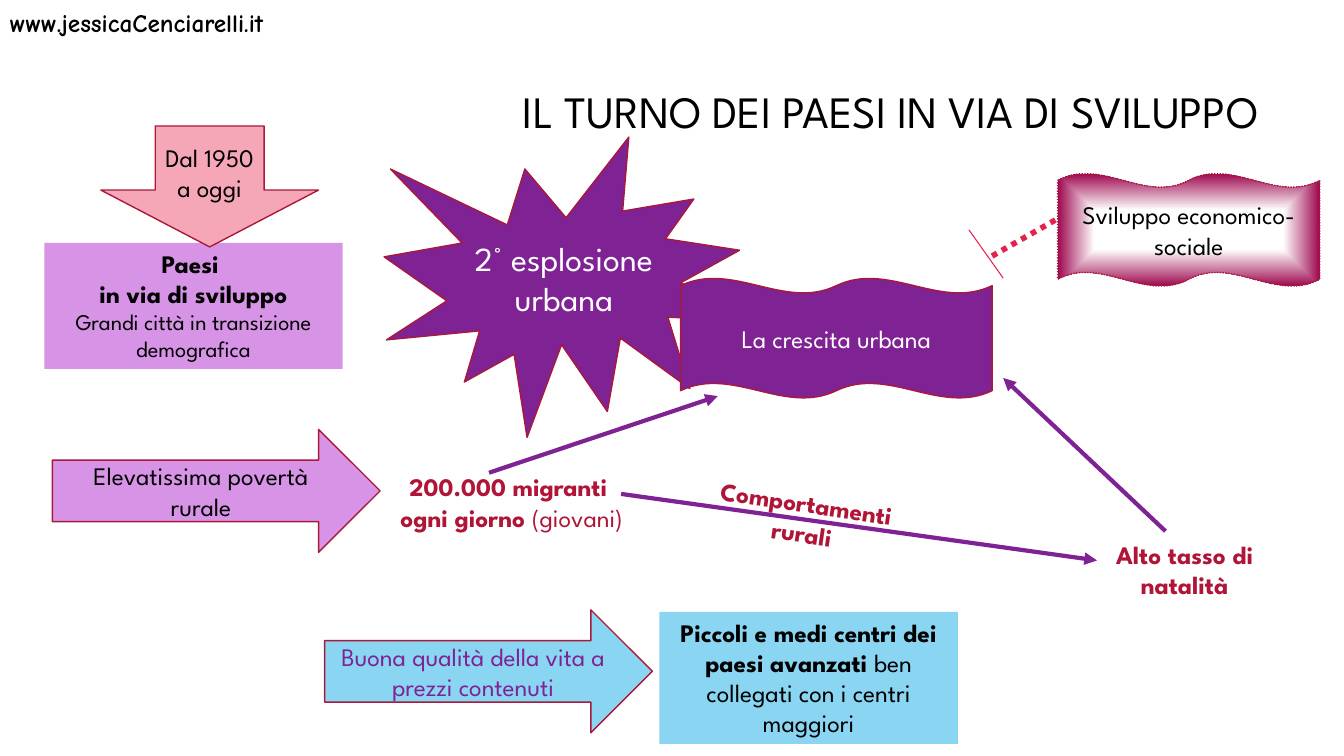
from dataclasses import dataclass

from lxml import etree
from pptx import Presentation
from pptx import util as u
from pptx.dml.color import RGBColor
from pptx.enum import dml, shapes, text
from pptx.oxml import parse_xml
from pptx.oxml.ns import nsdecls, qn

KIND = shapes.MSO_SHAPE
FIT = text.MSO_AUTO_SIZE
PX = 9144


@dataclass(frozen=True)
class Theme:
    """Colours, fonts and type sizes of the slide."""
    purple: str = "7F2294"
    lilac: str = "D794E6"
    sky: str = "89D5F2"
    pink: str = "F5A7B8"
    border: str = "A9193A"
    red: str = "E5224E"
    crimson: str = "B01538"
    plum: str = "9D074E"
    black: str = "000000"
    white: str = "FFFFFF"
    font: str = "League Spartan"
    address_font: str = "Comic Neue"
    title: int = 32
    burst: int = 24
    body: int = 18
    small: int = 16


class Page:
    """Draws styled elements on one slide, with lengths in px."""

    def __init__(self, deck, theme):
        self.theme = theme
        self.slide = deck.slides.add_slide(deck.slide_layouts[5])

    def fill_text(self, box, paras, color, size=None, font=None, align=text.PP_ALIGN.CENTER,
                  anchor=text.MSO_ANCHOR.TOP, fit=FIT.NONE, spacing=None):
        """Fill a box with paragraphs, each a list of (words, bold[, size]) runs."""
        frame = box.text_frame
        frame.word_wrap = True
        frame.auto_size = fit
        frame.vertical_anchor = anchor
        for index, runs in enumerate(paras):
            para = frame.add_paragraph() if index else frame.paragraphs[0]
            para.alignment = align
            if spacing:
                para.line_spacing = spacing
            for words, bold, *own_size in runs:
                span = para.add_run()
                span.text = words
                span.font.name = font or self.theme.font
                span.font.size = u.Pt(own_size[0] if own_size else size or self.theme.body)
                span.font.bold = bold
                span.font.color.rgb = RGBColor.from_string(color)

    def title(self, at, words):
        """Place and format the title placeholder."""
        box = self.slide.shapes.title
        box.left, box.top, box.width, box.height = (n * PX for n in at)
        self.fill_text(box, [[(words, False)]], self.theme.black, self.theme.title,
                       align=text.PP_ALIGN.RIGHT, spacing=0.9)

    def label(self, at, paras, color, rotation=0, **style):
        """Add a text box."""
        box = self.slide.shapes.add_textbox(*(n * PX for n in at))
        box.rotation = rotation
        self.fill_text(box, paras, color, fit=FIT.SHAPE_TO_FIT_TEXT, **style)

    def shape(self, kind, at, fill, paras, color, adjust=(), border=True, **style):
        """Add a filled preset shape with text."""
        box = self.slide.shapes.add_shape(kind, *(n * PX for n in at))
        box.shadow.inherit = False
        for index, value in enumerate(adjust):
            box.adjustments[index] = value
        box.fill.solid()
        box.fill.fore_color.rgb = RGBColor.from_string(fill)
        if border:
            box.line.color.rgb = RGBColor.from_string(self.theme.border)
            box.line.width = u.Pt(1)
        else:
            box.line.fill.background()
        self.fill_text(box, paras, color, **style)
        return box

    def panel(self, at, fill, paras):
        """Add a borderless rectangle with text from the top."""
        self.shape(KIND.RECTANGLE, at, fill, paras, self.theme.black, border=False,
                   fit=FIT.SHAPE_TO_FIT_TEXT)

    def figure(self, kind, at, fill, lines, color, **style):
        """Add a bordered shape with plain centred lines."""
        return self.shape(kind, at, fill, [[(line, False)] for line in lines], color,
                          anchor=text.MSO_ANCHOR.MIDDLE, **style)

    def glow(self, box, inner, outer):
        """Give a shape a gradient that darkens towards its edges."""
        stops = "".join(f'<a:gs pos="{pos}"><a:srgbClr val="{color}"/></a:gs>'
                        for pos, color in ((0, inner), (35000, inner), (100000, outer)))
        gradient = parse_xml(
            f'<a:gradFill {nsdecls("a")} rotWithShape="1"><a:gsLst>{stops}</a:gsLst>'
            '<a:path path="shape"><a:fillToRect l="50000" t="50000" r="50000" b="50000"/>'
            '</a:path></a:gradFill>')
        props = box.element.spPr
        props.replace(props.find(qn("a:solidFill")), gradient)

    def line(self, start, end, color, width, dash=None, arrow=False):
        """Add a straight line, optionally dotted or with an arrowhead."""
        link = self.slide.shapes.add_connector(
            shapes.MSO_CONNECTOR.STRAIGHT, *(n * PX for n in (*start, *end)))
        link.line.color.rgb = RGBColor.from_string(color)
        link.line.width = u.Pt(width)
        if dash:
            link.line.dash_style = dash
        props = link.element.spPr
        if arrow:
            etree.SubElement(props.find(qn("a:ln")), qn("a:tailEnd"), type="triangle")
        etree.SubElement(props, qn("a:effectLst"))


def main():
    """Build the slide and save it."""
    deck = Presentation()
    deck.slide_width, deck.slide_height = 1333 * PX, 750 * PX
    theme = Theme()
    page = Page(deck, theme)
    dotted = dml.MSO_LINE.ROUND_DOT

    page.title((317, 84, 942, 58), "IL TURNO DEI PAESI IN VIA DI SVILUPPO")
    page.figure(KIND.EXPLOSION1, (381, 136, 361, 298), theme.purple,
                ["2° esplosione", "urbana"], theme.white, size=theme.burst)
    page.panel((44, 241, 296, 125), theme.lilac, [
        [("Paesi ", True)],
        [("in via di sviluppo", True)],
        [("Grandi città in transizione demografica", False, theme.small)]])
    page.label((353, 463, 309, 71), [
        [("200.000 migranti ", True)],
        [("ogni giorno ", True), ("(giovani)", False)]], theme.crimson)
    page.figure(KIND.DOWN_ARROW, (100, 125, 216, 120), theme.pink,
                ["Dal 1950", "a oggi"], theme.black, adjust=(0.5, 0.47))
    page.label((0, 2, 341, 40), [[("www.jessicaCenciarelli.it", True)]], theme.black,
               font=theme.address_font, align=text.PP_ALIGN.LEFT)

    page.figure(KIND.DOUBLE_WAVE, (675, 276, 309, 119), theme.purple,
                ["La crescita urbana"], theme.white)
    growth = page.figure(KIND.DOUBLE_WAVE, (1049, 172, 260, 112), theme.white,
                         ["Sviluppo economico-sociale"], theme.black)
    page.glow(growth, theme.white, theme.plum)
    growth.line.dash_style = dotted
    page.line((984, 254), (1049, 217), theme.red, 4, dash=dotted)
    page.line((961, 228), (995, 276), theme.red, 0.75)

    page.label((1062, 530, 226, 71), [[("Alto tasso di natalità", True)]], theme.crimson)
    page.label((690, 479, 215, 71), [[("Comportamenti rurali", True)]], theme.crimson,
               rotation=8.4)
    for start, end in (((485, 469), (712, 393)),
                       ((1156, 527), (995, 375)),
                       ((616, 490), (1088, 556))):
        page.line(start, end, theme.purple, 3, arrow=True)

    page.panel((654, 607, 296, 131), theme.sky, [
        [("Piccoli e medi centri dei paesi avanzati ", True),
         ("ben collegati con i centri maggiori", False)]])
    for left, top, fill, color, words in (
            (322, 605, theme.sky, theme.purple, "Buona qualità della vita a prezzi contenuti"),
            (52, 426, theme.lilac, theme.black, "Elevatissima povertà rurale")):
        page.figure(KIND.RIGHT_ARROW, (left, top, 325, 122), fill, [words], color)

    deck.save("out.pptx")


if __name__ == "__main__":
    main()
